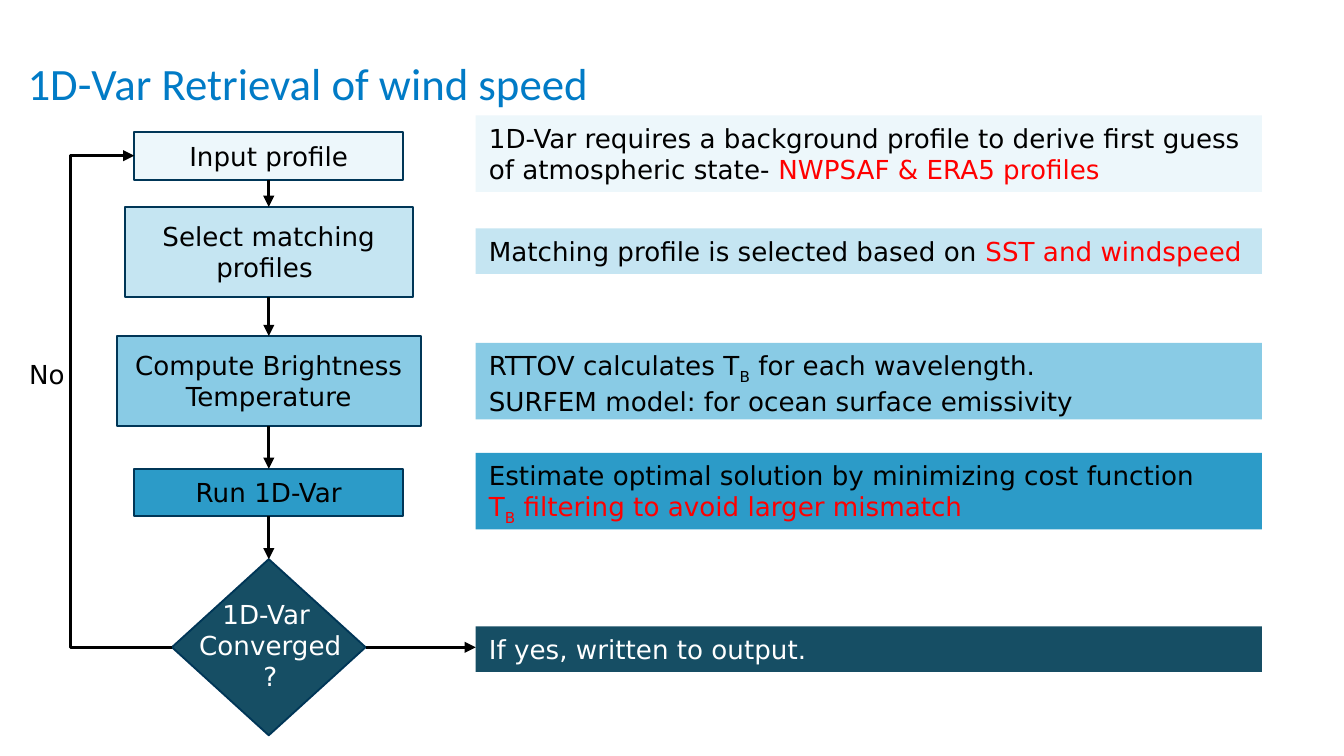
from dataclasses import dataclass

from lxml import etree
from pptx import Presentation
from pptx import util as u
from pptx.dml.color import RGBColor
from pptx.enum import shapes, text
from pptx.oxml import ns


@dataclass(frozen=True)
class Theme:
    title: str = "017BC6"
    ink: str = "000000"
    light: str = "FFFFFF"
    accent: str = "FF0000"
    outline: str = "003657"
    steps: tuple = ("EDF7FB", "C5E5F2", "89CBE5", "2C9BC8", "164E64")
    title_font: str = "Calibri"
    body_font: str = "DejaVu Sans"
    title_size: int = 24
    body_size: int = 14


THEME = Theme()
INK, RED, LIGHT = THEME.ink, THEME.accent, THEME.light

# Flow steps: text, width, top, height (cm)
STEPS = [
    ("Input profile", 5.08, 2.49, 0.91),
    ("Select matching profiles ", 5.44, 3.91, 1.7),
    ("Compute Brightness Temperature", 5.74, 6.35, 1.7),
    ("Run 1D-Var", 5.08, 8.86, 0.89),
    ("", 3.66, 10.57, 3.33),
]

# Explanations: top, height (cm), paragraphs of (text, colour, is subscript)
NOTES = [
    (2.18, 1.45, [[("1D-Var requires a background profile to derive first guess "
                    "of atmospheric state- ", INK, False),
                   ("NWPSAF & ERA5 profiles", RED, False)]]),
    (4.32, 0.86, [[("Matching profile is selected based on ", INK, False),
                   ("SST and windspeed", RED, False)]]),
    (6.48, 1.45, [[("RTTOV calculates T", INK, False), ("B", INK, True),
                   (" for each wavelength.", INK, False)],
                  [("SURFEM model: for ocean surface emissivity", INK, False)]]),
    (8.56, 1.45, [[("Estimate optimal solution by minimizing cost function", INK, False)],
                  [("T", RED, False), ("B", RED, True),
                   (" filtering to avoid larger mismatch", RED, False)]]),
    (11.84, 0.86, [[("If yes, written to output.", LIGHT, False)]]),
]


def style_font(font, color, name=THEME.body_font, size=THEME.body_size):
    font.name = name
    font.size = u.Pt(size)
    font.color.rgb = RGBColor.from_string(color)


def write(frame, paragraphs, align=text.PP_ALIGN.LEFT, anchor=text.MSO_ANCHOR.TOP):
    frame.word_wrap = True
    frame.vertical_anchor = anchor
    for index, parts in enumerate(paragraphs):
        paragraph = frame.paragraphs[0] if index == 0 else frame.add_paragraph()
        paragraph.alignment = align
        for words, color, subscript in parts:
            run = paragraph.add_run()
            run.text = words
            style_font(run.font, color)
            if subscript:
                run._r.get_or_add_rPr().set("baseline", "-25000")


def add_box(slide, kind, box, fill, outline=None):
    shape = slide.shapes.add_shape(kind, *map(u.Cm, box))
    shape.shadow.inherit = False
    shape.fill.solid()
    shape.fill.fore_color.rgb = RGBColor.from_string(fill)
    if outline:
        shape.line.color.rgb = RGBColor.from_string(outline)
        shape.line.width = u.Pt(1)
    else:
        shape.line.fill.background()
    return shape


def add_label(slide, box, lines, color, align=text.PP_ALIGN.LEFT):
    label = slide.shapes.add_textbox(*map(u.Cm, box))
    write(label.text_frame, [[(line, color, False)] for line in lines], align)


def add_arrow(slide, start, end, bend=None):
    """Straight arrow, or an elbow whose bend is a share of its width."""
    kind = shapes.MSO_CONNECTOR.STRAIGHT if bend is None else shapes.MSO_CONNECTOR.ELBOW
    arrow = slide.shapes.add_connector(kind, *map(u.Cm, (*start, *end)))
    arrow.line.color.rgb = RGBColor.from_string(THEME.ink)
    arrow.line.width = u.Pt(1.5)
    etree.SubElement(arrow.line._get_or_add_ln(), ns.qn("a:tailEnd"), type="triangle")
    properties = arrow._element.spPr
    etree.SubElement(properties, ns.qn("a:effectLst"))
    if bend is not None:
        guides = properties.find(ns.qn("a:prstGeom")).get_or_add_avLst()
        etree.SubElement(guides, ns.qn("a:gd"), name="adj1",
                         fmla=f"val {round(bend * 100000)}")


def add_title(slide, box):
    title = slide.shapes.title
    title.left, title.top, title.width, title.height = map(u.Cm, box)
    frame = title.text_frame
    frame.text = "1D-Var Retrieval of wind speed"
    frame.vertical_anchor = text.MSO_ANCHOR.BOTTOM
    frame.margin_left = frame.margin_right = u.Cm(0.19)
    frame.margin_top = frame.margin_bottom = u.Cm(0.1)
    paragraph = frame.paragraphs[0]
    paragraph.alignment = text.PP_ALIGN.LEFT
    paragraph.line_spacing = 0.9
    style_font(paragraph.runs[0].font, THEME.title, THEME.title_font, THEME.title_size)


def add_flow(slide, left, width, loop_x, output_x):
    axis = left + width / 2
    # Steps, the last being the decision
    for (words, step_width, top, height), fill in zip(STEPS, THEME.steps):
        kind = (shapes.MSO_SHAPE.FLOWCHART_PROCESS if words
                else shapes.MSO_SHAPE.FLOWCHART_DECISION)
        box = (axis - step_width / 2, top, step_width, height)
        shape = add_box(slide, kind, box, fill, THEME.outline)
        if words:
            write(shape.text_frame, [[(words, INK, False)]],
                  text.PP_ALIGN.CENTER, text.MSO_ANCHOR.MIDDLE)

    # Arrows down the column
    for (_, _, top, height), (_, _, next_top, _) in zip(STEPS, STEPS[1:]):
        add_arrow(slide, (axis, top + height), (axis, next_top))

    # Loop back to the input, and the way out
    _, first_width, first_top, first_height = STEPS[0]
    _, last_width, last_top, last_height = STEPS[-1]
    middle = last_top + last_height / 2
    start_x, end_x = axis - last_width / 2, axis - first_width / 2
    add_arrow(slide, (start_x, middle), (end_x, first_top + first_height / 2),
              bend=(start_x - loop_x) / (start_x - end_x))
    add_arrow(slide, (axis + last_width / 2, middle), (output_x, middle))

    # Labels
    add_label(slide, (2.57, 11.18, 5.08, 2.03), ["1D-Var ", "Converged", "?"],
              LIGHT, text.PP_ALIGN.CENTER)
    add_label(slide, (0.3, 6.65, 1.55, 0.84), ["No"], INK)


def add_notes_column(slide, left, width):
    for (top, height, paragraphs), fill in zip(NOTES, THEME.steps):
        shape = add_box(slide, shapes.MSO_SHAPE.RECTANGLE, (left, top, width, height), fill)
        write(shape.text_frame, paragraphs)


def main():
    presentation = Presentation()
    presentation.slide_width, presentation.slide_height = u.Cm(25.4), u.Cm(14.29)
    slide = presentation.slides.add_slide(presentation.slide_layouts[5])
    add_title(slide, (0.33, 0.2, 22.76, 1.98))
    add_notes_column(slide, left=8.99, width=14.86)
    add_flow(slide, left=2.21, width=5.74, loop_x=1.33, output_x=8.99)
    presentation.save("out.pptx")


if __name__ == "__main__":
    main()
